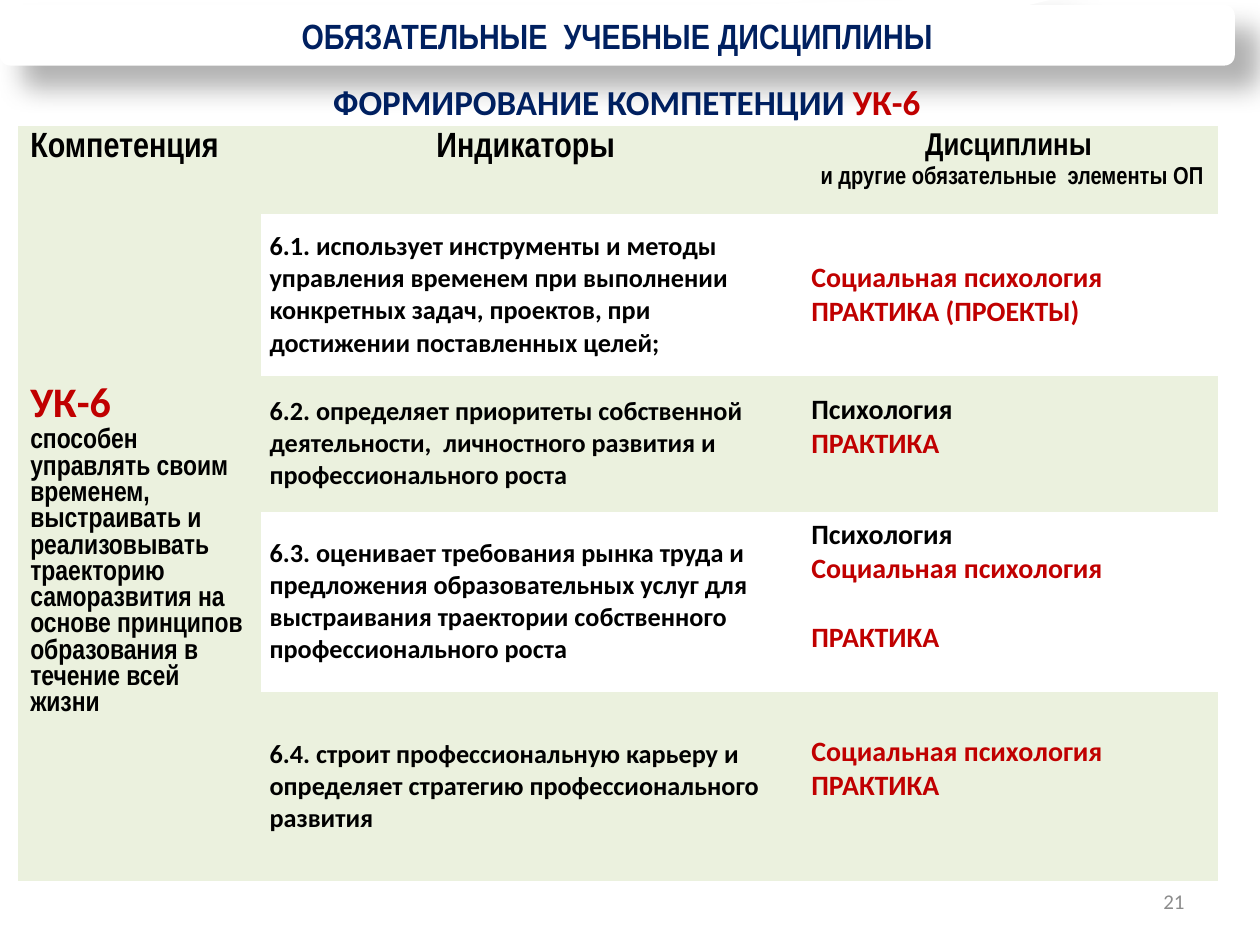
import pptx
import pptx.util
import pptx.oxml
from pptx.dml.color import RGBColor
from pptx.enum.shapes import MSO_SHAPE
from pptx.enum.text import MSO_ANCHOR, MSO_AUTO_SIZE, PP_ALIGN
from pptx.oxml.ns import qn
from pptx.util import Inches

NAVY = RGBColor(0x00, 0x20, 0x60)
RED = RGBColor(0xC0, 0x00, 0x00)
BLACK = RGBColor(0, 0, 0)
GRAY = RGBColor(0x8C, 0x8C, 0x8C)
WHITE = RGBColor(0xFF, 0xFF, 0xFF)
GREEN = RGBColor(0xEB, 0xF1, 0xDE)
NARROW, CALIBRI = "Arial Narrow", "Calibri"
LEFT, CENTER, RIGHT = PP_ALIGN.LEFT, PP_ALIGN.CENTER, PP_ALIGN.RIGHT
NO_STYLE_NO_GRID = "{2D5ABB26-0587-4C30-8999-92F81FD0307C}"

BANNER = "ОБЯЗАТЕЛЬНЫЕ  УЧЕБНЫЕ ДИСЦИПЛИНЫ"
HEADING = [("ФОРМИРОВАНИЕ КОМПЕТЕНЦИИ ", NAVY), ("УК-6", RED)]
PAGE_NUMBER = "21"
COMPETENCE_CODE = "УК-6"
COMPETENCE = ("способен управлять своим временем, выстраивать и реализовывать "
              "траекторию саморазвития на основе принципов образования в течение всей жизни")
PSYCHOLOGY = ("Психология", BLACK)
SOCIAL = ("Социальная психология", RED)
PRACTICE = ("ПРАКТИКА", RED)
# indicator, disciplines, bottom margin of the disciplines, gap in points before the last one
INDICATORS = [
    ("6.1. использует инструменты и методы управления временем при выполнении "
     "конкретных задач, проектов, при достижении поставленных целей;",
     [SOCIAL, ("ПРАКТИКА (ПРОЕКТЫ)", RED)], 0.05, 0),
    ("6.2. определяет приоритеты собственной деятельности,  личностного развития "
     "и профессионального роста",
     [PSYCHOLOGY, PRACTICE], 0.32, 0),
    ("6.3. оценивает требования рынка труда и предложения образовательных услуг для "
     "выстраивания траектории собственного профессионального роста",
     [PSYCHOLOGY, SOCIAL, PRACTICE], 0.3, 19.5),
    ("6.4. строит профессиональную карьеру и определяет стратегию "
     "профессионального развития",
     [SOCIAL, PRACTICE], 0.32, 0),
]
COLUMN_WIDTHS = [1.93, 4.27, 3.33]
ROW_HEIGHTS = [0.7, 1.28, 1.08, 1.43, 1.5]


def write(frame, lines, align=LEFT, bold=True):
    """Fill a text frame; each line is a list of (text, size, font, colour) spans."""
    for index, spans in enumerate(lines):
        para = frame.paragraphs[0] if index == 0 else frame.add_paragraph()
        para.alignment = align
        for text, size, font, color in spans:
            span = para.add_run()
            span.text = text
            span.font.size = pptx.util.Pt(size)
            span.font.name = font
            span.font.bold = bold
            span.font.color.rgb = color


def add_shadow(shape):
    shape.shadow.inherit = False
    effects = shape._element.spPr.find(qn("a:effectLst"))
    effects.append(pptx.oxml.parse_xml(
        '<a:outerShdw xmlns:a="http://schemas.openxmlformats.org/drawingml/2006/main" '
        'blurRad="190500" dist="228600" dir="2700000" rotWithShape="0">'
        '<a:srgbClr val="000000"><a:alpha val="30000"/></a:srgbClr></a:outerShdw>'))


def add_banner(page):
    banner = page.shapes.add_shape(MSO_SHAPE.ROUNDED_RECTANGULAR_CALLOUT,
                                   Inches(0), Inches(0.04), Inches(9.8), Inches(0.48))
    for index, value in enumerate((0.364, -0.652, 0.167)):
        banner.adjustments[index] = value
    banner.fill.solid()
    banner.fill.fore_color.rgb = WHITE
    banner.line.fill.background()
    add_shadow(banner)
    banner.text_frame.word_wrap = True
    write(banner.text_frame, [[(BANNER, 20, NARROW, NAVY)]], CENTER)
    # The banner's shadow belongs behind the heading
    page.shapes._spTree.insert(2, banner._element)


def add_heading(page):
    title = page.shapes.title
    title.left, title.top = Inches(0.18), Inches(0.59)
    title.width, title.height = Inches(9.59), Inches(0.44)
    frame = title.text_frame
    frame.auto_size = MSO_AUTO_SIZE.NONE
    frame.vertical_anchor = MSO_ANCHOR.TOP
    write(frame, [[(text, 20, CALIBRI, color) for text, color in HEADING]], CENTER)


def add_page_number(page):
    box = page.shapes.add_textbox(Inches(7.17), Inches(6.95), Inches(2.33), Inches(0.4))
    box.text_frame.word_wrap = True
    box.text_frame.vertical_anchor = MSO_ANCHOR.MIDDLE
    write(box.text_frame, [[(PAGE_NUMBER, 12, CALIBRI, GRAY)]], RIGHT, bold=False)


def add_competence_table(page):
    frame = page.shapes.add_table(len(ROW_HEIGHTS), len(COLUMN_WIDTHS), Inches(0.14), Inches(1),
                                  Inches(sum(COLUMN_WIDTHS)), Inches(sum(ROW_HEIGHTS)))
    table = frame.table
    table._tbl.tblPr.find(qn("a:tableStyleId")).text = NO_STYLE_NO_GRID
    table.first_row = table.horz_banding = False
    for column, width in zip(table.columns, COLUMN_WIDTHS):
        column.width = Inches(width)
    for index, (row, height) in enumerate(zip(table.rows, ROW_HEIGHTS)):
        row.height = Inches(height)
        for number, cell in enumerate(row.cells):
            cell.fill.solid()
            cell.fill.fore_color.rgb = WHITE if index % 2 and number else GREEN
            if index:
                cell.vertical_anchor = MSO_ANCHOR.MIDDLE

    write(table.cell(0, 0).text_frame, [[("Компетенция", 20, NARROW, BLACK)]])
    write(table.cell(0, 1).text_frame, [[("Индикаторы ", 20, NARROW, BLACK)]], CENTER)
    write(table.cell(0, 2).text_frame,
          [[("Дисциплины", 18, NARROW, BLACK)],
           [(" ", 18, NARROW, BLACK),
            ("и другие обязательные  элементы ОП", 14, NARROW, BLACK)]], CENTER)

    competence = table.cell(1, 0)
    competence.merge(table.cell(len(INDICATORS), 0))
    write(competence.text_frame, [[(COMPETENCE_CODE, 24, CALIBRI, RED)],
                                  [(COMPETENCE, 16, NARROW, BLACK)]])

    for row, (indicator, disciplines, bottom, gap) in enumerate(INDICATORS, start=1):
        cell = table.cell(row, 1)
        cell.margin_left = cell.margin_right = Inches(0.07)
        cell.margin_top = cell.margin_bottom = Inches(0)
        write(cell.text_frame, [[(indicator, 15, CALIBRI, BLACK)]])
        cell = table.cell(row, 2)
        cell.margin_bottom = Inches(bottom)
        write(cell.text_frame, [[(name, 16, CALIBRI, color)] for name, color in disciplines])
        cell.text_frame.paragraphs[-1].space_before = pptx.util.Pt(gap)


def main():
    deck = pptx.Presentation()
    deck.slide_width, deck.slide_height = Inches(10), Inches(7.5)
    page = deck.slides.add_slide(deck.slide_layouts[5])
    add_heading(page)
    add_banner(page)
    add_page_number(page)
    add_competence_table(page)
    deck.save("out.pptx")


if __name__ == "__main__":
    main()
